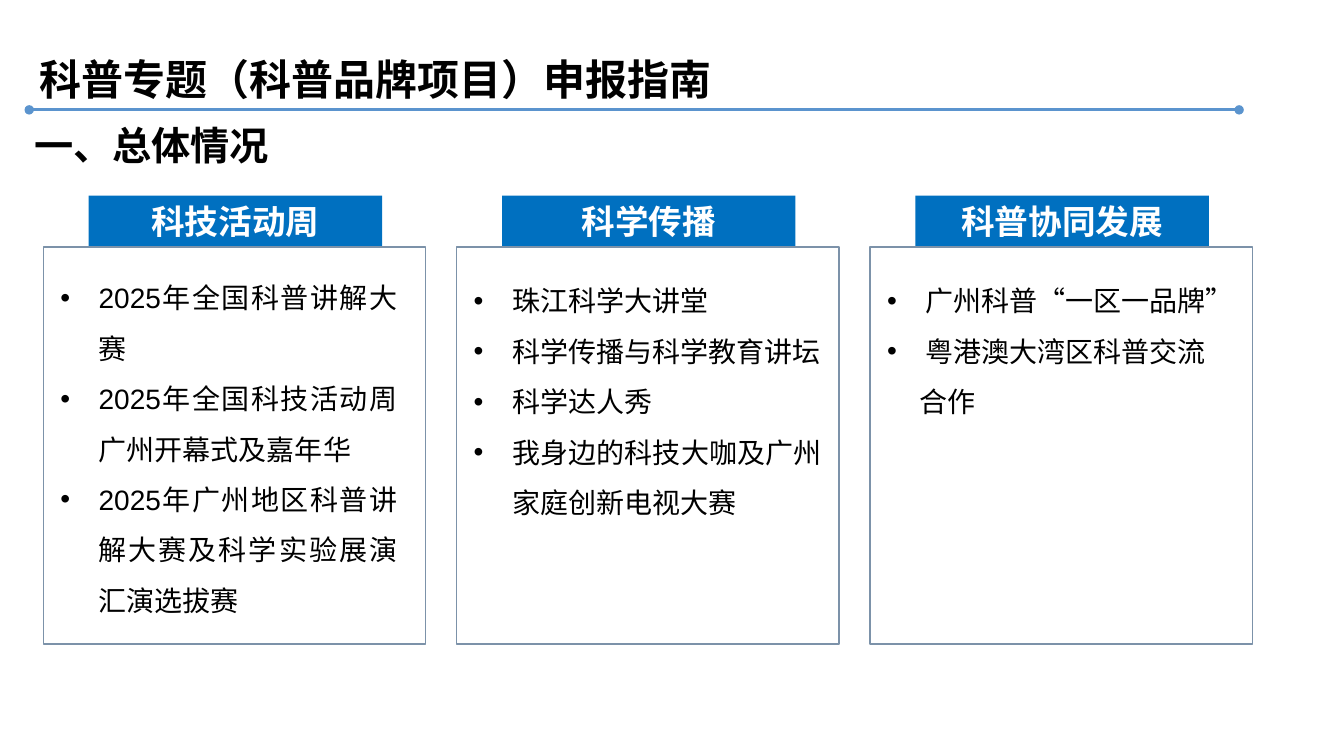
import pptx
import pptx.util
import pptx.dml.color
import pptx.enum.dml
import pptx.enum.lang
import pptx.enum.shapes
import pptx.enum.text
from lxml import etree
from pptx.oxml.ns import qn
from pptx.util import Inches

# Content
TITLE = "科普专题（科普品牌项目）申报指南"
SUBTITLE = "一、总体情况"
COLUMNS = [
    {"heading": "科技活动周", "list_top": 2.57, "list_width": 3.54,
     "items": ["2025年全国科普讲解大赛", "2025年全国科技活动周广州开幕式及嘉年华",
               "2025年广州地区科普讲解大赛及科学实验展演汇演选拔赛"]},
    {"heading": "科学传播", "list_top": 2.6, "list_width": 3.65,
     "items": ["珠江科学大讲堂", "科学传播与科学教育讲坛", "科学达人秀",
               "我身边的科技大咖及广州家庭创新电视大赛"]},
    {"heading": "科普协同发展", "list_top": 2.6, "list_width": 3.69,
     "items": ["广州科普“一区一品牌”", "粤港澳大湾区科普交流"], "last_line": "合作"},
]
COLORS = {"text": "000000", "white": "FFFFFF", "heading": "0070C0",
          "border": "7C92A9", "rule": "5B94CE"}
FONT = "Arial"

# Layout, in inches
FIRST_LEFT, PITCH = 0.43, 4.1
PANEL_TOP, PANEL_WIDTH, PANEL_HEIGHT = 2.45, 3.79, 3.94
HEADING_TOP, HEADING_WIDTH, HEADING_HEIGHT = 1.94, 2.91, 0.5
HEADING_OFFSET = 0.45
LIST_OFFSET, LIST_HEIGHT = 0.07, 3.95
BULLET_INDENT, LAST_LINE_INDENT = 0.38, 0.32
ALIGN = pptx.enum.text.PP_ALIGN
ANCHOR = pptx.enum.text.MSO_ANCHOR
AUTO_SIZE = pptx.enum.text.MSO_AUTO_SIZE


def color(name):
    return pptx.dml.color.RGBColor.from_string(COLORS[name])


def write(para, text, size=20, bold=False, fill="text", align=ALIGN.LEFT,
          spacing=1.5, indent=0, bullet=False):
    para.alignment = align
    para.line_spacing = spacing
    properties = para._p.get_or_add_pPr()
    if indent:
        properties.set("marL", str(Inches(indent)))
    if bullet:
        properties.set("indent", str(-Inches(indent)))
        etree.SubElement(properties, qn("a:buFont")).set("typeface", FONT)
        etree.SubElement(properties, qn("a:buChar")).set("char", "•")
    span = para.add_run()
    span.text = text
    span.font.name = FONT
    span.font.size = pptx.util.Pt(size)
    span.font.bold = bold
    span.font.color.rgb = color(fill)
    span.font.language_id = pptx.enum.lang.MSO_LANGUAGE_ID.SIMPLIFIED_CHINESE


def add_rectangle(page, left, top, width, height, fill, border=None):
    box = page.shapes.add_shape(pptx.enum.shapes.MSO_SHAPE.RECTANGLE, Inches(left),
                                Inches(top), Inches(width), Inches(height))
    box.shadow.inherit = False
    box.fill.solid()
    box.fill.fore_color.rgb = color(fill)
    if border:
        box.line.color.rgb = color(border)
        box.line.width = pptx.util.Pt(1)
    else:
        box.line.fill.background()
    return box


def add_text_box(page, left, top, width, height):
    box = page.shapes.add_textbox(Inches(left), Inches(top), Inches(width), Inches(height))
    box.text_frame.word_wrap = True
    return box


def add_rule(page):
    rule = page.shapes.add_connector(pptx.enum.shapes.MSO_CONNECTOR.STRAIGHT,
                                     Inches(0.29), Inches(1.09), Inches(12.29), Inches(1.09))
    rule.line.color.rgb = color("rule")
    rule.line.width = pptx.util.Pt(2.25)
    line = rule.line._get_or_add_ln()
    for end in ("a:headEnd", "a:tailEnd"):
        etree.SubElement(line, qn(end)).set("type", "oval")
    etree.SubElement(rule._element.spPr, qn("a:effectLst"))


def add_column(page, left, column):
    add_rectangle(page, left, PANEL_TOP, PANEL_WIDTH, PANEL_HEIGHT, "white", "border")

    # Bulleted list
    frame = add_text_box(page, left + LIST_OFFSET, column["list_top"],
                         column["list_width"], LIST_HEIGHT).text_frame
    for number, item in enumerate(column["items"]):
        para = frame.add_paragraph() if number else frame.paragraphs[0]
        write(para, item, align=ALIGN.JUSTIFY, indent=BULLET_INDENT, bullet=True)
    if "last_line" in column:
        write(frame.add_paragraph(), column["last_line"], align=ALIGN.JUSTIFY,
              indent=LAST_LINE_INDENT)

    # Heading tab
    heading = add_rectangle(page, left + HEADING_OFFSET, HEADING_TOP, HEADING_WIDTH,
                            HEADING_HEIGHT, "heading")
    heading.text_frame.word_wrap = True
    heading.text_frame.vertical_anchor = ANCHOR.MIDDLE
    write(heading.text_frame.paragraphs[0], column["heading"], size=24, bold=True,
          fill="white", align=ALIGN.CENTER, spacing=1.0)


def main():
    deck = pptx.Presentation()
    deck.slide_width, deck.slide_height = Inches(13.33), Inches(7.5)
    page = deck.slides.add_slide(deck.slide_layouts[5])

    # Title and subtitle
    title = page.shapes.title
    title.left, title.top = Inches(0.29), Inches(0.23)
    title.width, title.height = Inches(10.69), Inches(0.77)
    title.text_frame.word_wrap = True
    title.text_frame.vertical_anchor = ANCHOR.TOP
    title.text_frame.auto_size = AUTO_SIZE.SHAPE_TO_FIT_TEXT
    write(title.text_frame.paragraphs[0], TITLE, size=30, bold=True)
    add_rule(page)
    subtitle = add_text_box(page, 0.24, 0.92, 10.69, 0.72)
    subtitle.text_frame.auto_size = AUTO_SIZE.SHAPE_TO_FIT_TEXT
    write(subtitle.text_frame.paragraphs[0], SUBTITLE, size=28, bold=True)

    # Three columns
    for number, column in enumerate(COLUMNS):
        add_column(page, FIRST_LEFT + number * PITCH, column)

    deck.save("out.pptx")


if __name__ == "__main__":
    main()
